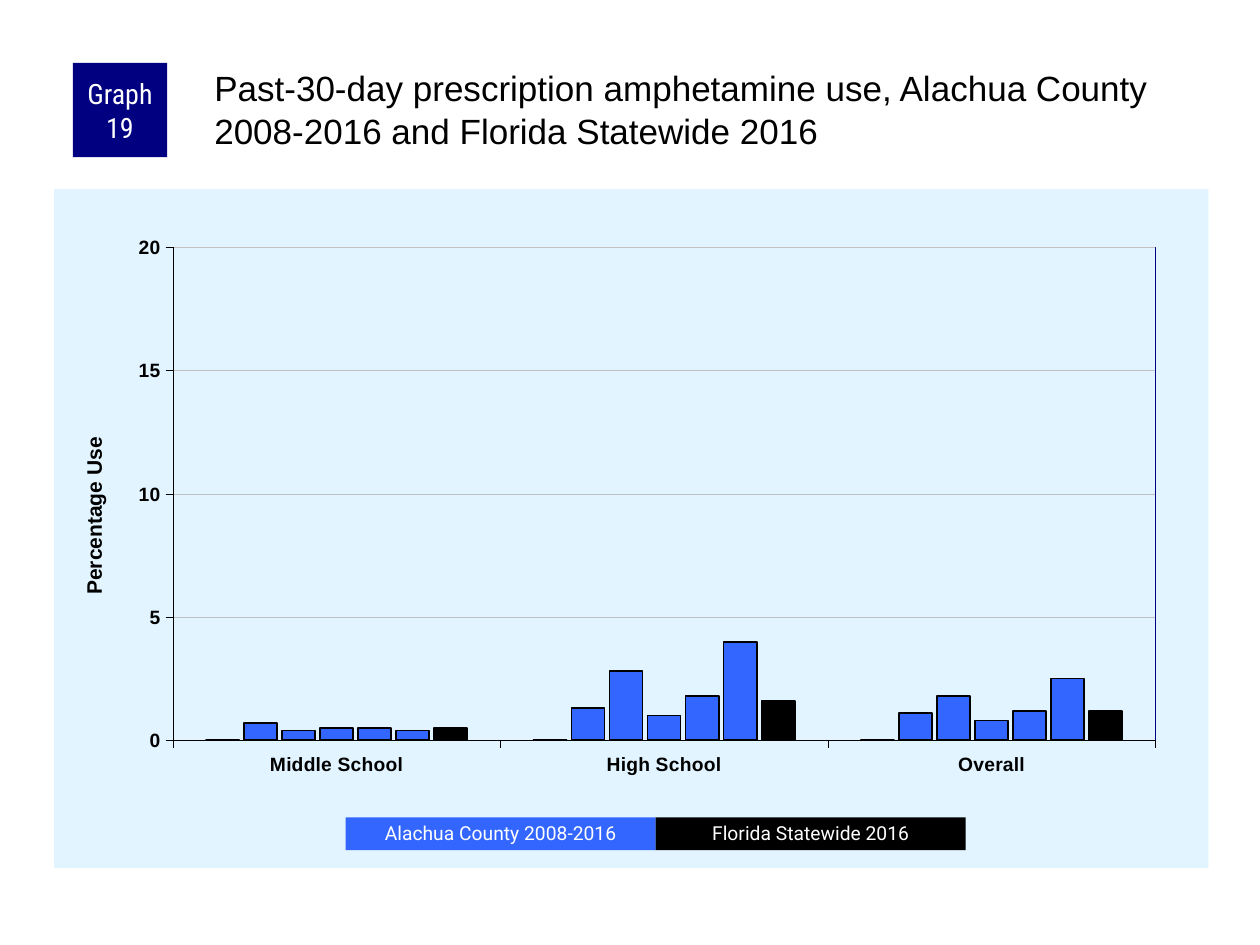
"""Build the slide on past-30-day prescription amphetamine use."""
from dataclasses import dataclass

from lxml import etree
from pptx import Presentation
from pptx import util as u
from pptx.chart import data as cd
from pptx.dml.color import RGBColor
from pptx.enum import chart as ec, shapes, text
from pptx.oxml import parse_xml
from pptx.oxml.ns import nsdecls, qn

HUES = {"navy": "000080", "blue": "3366FF", "black": "000000",
        "white": "FFFFFF", "pale": "E1F4FF", "grey": "C0C0C0"}
CATS = ["Middle School", "High School", "Overall"]
ROWS = [(0, 0, 0), (0.7, 1.3, 1.1), (0.4, 2.8, 1.8), (0.5, 1, 0.8),
        (0.5, 1.8, 1.2), (0.4, 4, 2.5), (0.5, 1.6, 1.2)]


@dataclass
class Label:
    """A filled box with centred text; lengths in centimetres."""
    words: str
    box: tuple[float, float, float, float]
    fill: str
    face: str
    size: int
    lead: float = 1.0
    pad: tuple[float, float] = (0.25, 0.13)


KEY_X, KEY_W = 6.97, 6.25
LABELS = [
    Label("Graph 19", (1.47, 1.27, 1.9, 1.9), "navy", "Roboto Condensed", 16,
          pad=(0.13, 0)),
    *(Label(words, (KEY_X + i * KEY_W, 16.48, KEY_W, 0.66), fill, "Roboto", 11, 0.9)
      for i, (words, fill) in enumerate([("Alachua County 2008-2016", "blue"),
                                         ("Florida Statewide 2016", "black")])),
]


def hue(name: str) -> RGBColor:
    """Look up a colour."""
    return RGBColor.from_string(HUES[name])


def put(item, vals: dict) -> None:
    """Set each named attribute on an object."""
    for name, val in vals.items():
        setattr(item, name, val)


def style(font, face: str, size: int, ink: str, bold: bool = False) -> None:
    """Format a font."""
    put(font, {"name": face, "size": u.Pt(size), "bold": bold})
    font.color.rgb = hue(ink)


def rule(line, ink: str, width: float) -> None:
    """Format a line."""
    line.color.rgb = hue(ink)
    line.width = u.Pt(width)


def place(box: tuple) -> list:
    """Turn centimetres into lengths."""
    return [u.Cm(n) for n in box]


def draw(slide, item: Label) -> None:
    """Draw a label."""
    box = slide.shapes.add_shape(shapes.MSO_SHAPE.RECTANGLE, *place(item.box))
    box.shadow.inherit = False
    box.fill.solid()
    box.fill.fore_color.rgb = hue(item.fill)
    box.line.fill.background()
    side, edge = place(item.pad)
    frame = box.text_frame
    put(frame, {"word_wrap": True, "vertical_anchor": text.MSO_ANCHOR.MIDDLE,
                "margin_left": side, "margin_right": side,
                "margin_top": edge, "margin_bottom": edge})
    para = frame.paragraphs[0]
    put(para, {"text": item.words, "alignment": text.PP_ALIGN.CENTER,
               "line_spacing": item.lead})
    style(para.runs[0].font, item.face, item.size, "white")


def lay(node, spot: int, vals: dict) -> None:
    """Give a chart part a manual layout."""
    for old in node.findall(qn("c:layout")):
        node.remove(old)
    part = parse_xml(f'<c:layout {nsdecls("c")}><c:manualLayout/></c:layout>')
    for name, val in vals.items():
        etree.SubElement(part[0], qn(f"c:{name}")).set("val", str(val))
    node.insert(spot, part)


def look(inner: str):
    """Make the shape properties of a chart part."""
    return parse_xml(f'<c:spPr {nsdecls("c", "a")}>{inner}</c:spPr>')


def paint(name: str) -> str:
    """Write a solid fill."""
    return f'<a:solidFill><a:srgbClr val="{HUES[name]}"/></a:solidFill>'


def graph(slide) -> None:
    """Draw the column chart."""
    data = cd.CategoryChartData()
    data.categories = CATS
    for i, row in enumerate(ROWS, 1):
        data.add_series(f"Series {i}", row)
    chart = slide.shapes.add_chart(ec.XL_CHART_TYPE.COLUMN_CLUSTERED,
                                   *place((1.09, 3.81, 23.27, 13.69)), data).chart
    put(chart, {"has_legend": False, "has_title": False})
    style(chart.font, "Arial", 8, "black")

    plot = chart.plots[0]
    put(plot, {"gap_width": 200, "overlap": -15, "vary_by_categories": False})
    for bars in plot.series:
        bars.format.fill.solid()
        bars.format.fill.fore_color.rgb = hue("blue")
        rule(bars.format.line, "black", 1)
    plot.series[-1].format.fill.fore_color.rgb = hue("black")

    axis = chart.value_axis
    for side in (chart.category_axis, axis):
        put(side, {"major_tick_mark": ec.XL_TICK_MARK.OUTSIDE,
                   "minor_tick_mark": ec.XL_TICK_MARK.NONE})
        style(side.tick_labels.font, "Arial", 11, "black", True)
        rule(side.format.line, "black", 0.25)
    put(axis, {"minimum_scale": 0, "maximum_scale": 20, "major_unit": 5,
               "has_major_gridlines": True})
    put(axis.tick_labels, {"number_format": "0", "number_format_is_linked": False})
    rule(axis.major_gridlines.format.line, "grey", 0.25)

    title = axis.axis_title
    title.text_frame.text = "Percentage Use"
    style(title.text_frame.paragraphs[0].runs[0].font, "Arial", 12, "black", True)
    node = title._element
    body = next(node.iter(qn("a:bodyPr")))
    body.set("rot", "-5400000")
    body.set("vert", "horz")
    lay(node, 1, {"xMode": "edge", "yMode": "edge", "x": 0.02, "y": 0.36})

    root = chart._chartSpace.find(qn("c:chart"))
    root.addnext(look(paint("pale") + "<a:ln><a:noFill/></a:ln>"))
    area = root.find(qn("c:plotArea"))
    lay(area, 0, {"layoutTarget": "inner", "xMode": "edge", "yMode": "edge",
                  "x": 0.103, "y": 0.086, "w": 0.851, "h": 0.726})
    area.append(look(f'<a:noFill/><a:ln w="{u.Pt(0.25)}">{paint("navy")}</a:ln>'))


def head(slide) -> None:
    """Fill the title."""
    title = slide.shapes.title
    put(title, dict(zip(("left", "top", "width", "height"),
                        place((4.24, 1.27, 20.12, 2.11)))))
    frame = title.text_frame
    put(frame, {"word_wrap": True, "auto_size": text.MSO_AUTO_SIZE.NONE,
                "vertical_anchor": text.MSO_ANCHOR.TOP,
                "margin_left": u.Cm(0.08), "margin_top": u.Cm(0.08),
                "margin_right": 0, "margin_bottom": 0})
    para = frame.paragraphs[0]
    put(para, {"text": "Past-30-day prescription amphetamine use, "
                       "Alachua County 2008-2016 and Florida Statewide 2016",
               "alignment": text.PP_ALIGN.LEFT})
    style(para.runs[0].font, "Arial", 20, "black")


def main() -> None:
    """Build and save the slide."""
    deck = Presentation()
    put(deck, {"slide_width": u.Cm(25.4), "slide_height": u.Cm(19.05)})
    slide = deck.slides.add_slide(deck.slide_layouts[5])
    graph(slide)
    head(slide)
    for item in LABELS:
        draw(slide, item)
    deck.save("out.pptx")


if __name__ == "__main__":
    main()
